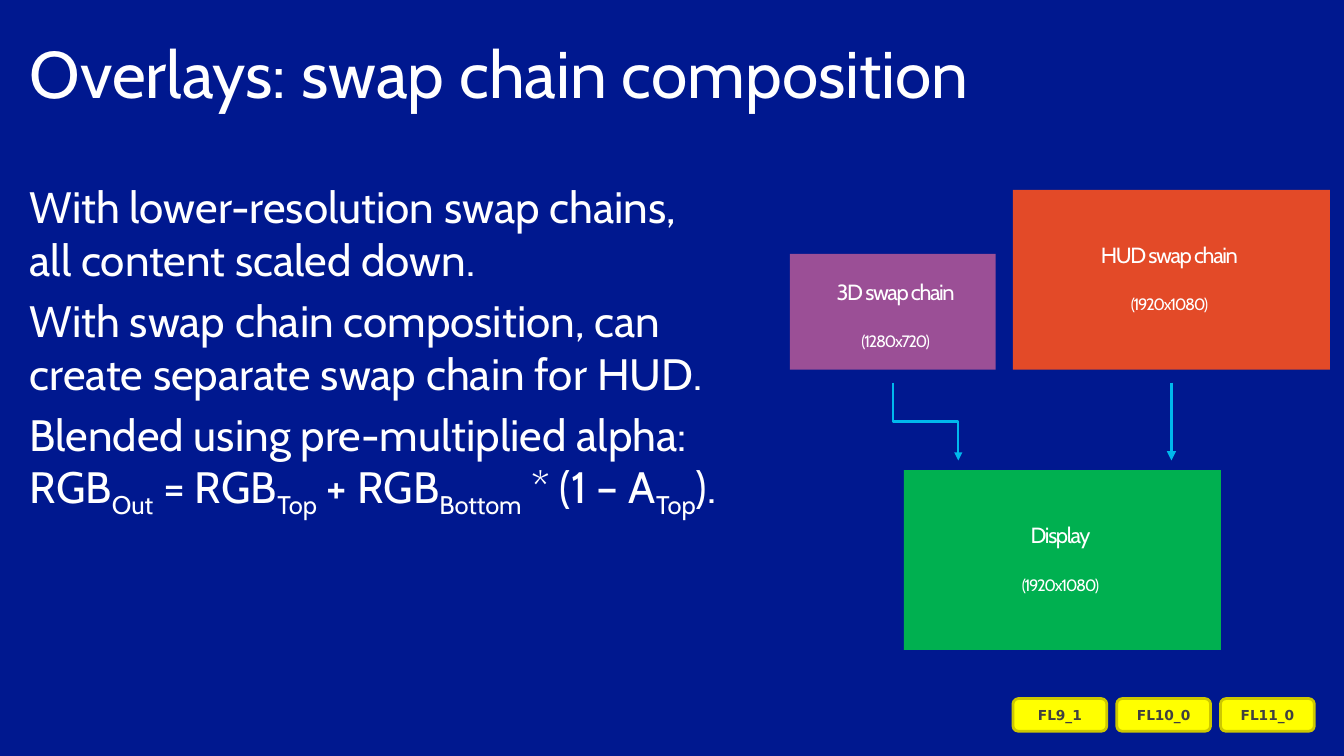
from pptx import Presentation
from pptx.dml.color import RGBColor
from pptx.enum.shapes import MSO_CONNECTOR, MSO_SHAPE
from pptx.enum.text import MSO_ANCHOR, PP_ALIGN
from pptx.oxml.ns import qn
from pptx.util import Pt
from lxml.etree import SubElement

WHITE = "FFFFFF"
CYAN = "00B8ED"
BODY = [
    ["With lower-resolution swap chains,", "all content scaled down."],
    ["With swap chain composition, can", "create separate swap chain for HUD."],
    ["Blended using pre-multiplied alpha:",
     "RGB_Out_ = RGB_Top_ + RGB_Bottom_ * (1 – A_Top_)."],
]
FEATURE_LEVELS = ["FL9_1", "FL10_0", "FL11_0"]


def color(value):
    return RGBColor.from_string(value)


def style(span, size, fill=WHITE, font="Cabin", bold=False):
    span.font.size = Pt(size)
    span.font.name = font
    span.font.bold = bold
    span.font.color.rgb = color(fill)


def set_margins(frame, left, top, right, bottom):
    frame.margin_left, frame.margin_top = Pt(left), Pt(top)
    frame.margin_right, frame.margin_bottom = Pt(right), Pt(bottom)


def add_text_box(page, left, top, width, height):
    frame = page.shapes.add_textbox(Pt(left), Pt(top), Pt(width), Pt(height)).text_frame
    frame.word_wrap = True
    set_margins(frame, 0, 0, 0, 0)
    return frame


def add_title(page, text):
    frame = add_text_box(page, 21.6, 23.8, 936, 72)
    frame.text = text
    style(frame.paragraphs[0].runs[0], 48)


def add_line_with_subscripts(para, line):
    for index, piece in enumerate(line.split("_")):
        span = para.add_run()
        span.text = piece
        style(span, 32)
        if index % 2:
            span.font._element.set("baseline", "-25000")


def add_body(page):
    frame = add_text_box(page, 21.6, 131, 936, 396)
    for index, (first, second) in enumerate(BODY):
        para = frame.add_paragraph() if index else frame.paragraphs[0]
        para.space_before = Pt(6 if index else 0)
        add_line_with_subscripts(para, first)
        para.add_line_break()
        add_line_with_subscripts(para, second)


def add_box(page, kind, left, top, width, height, fill):
    box = page.shapes.add_shape(kind, Pt(left), Pt(top), Pt(width), Pt(height))
    box.shadow.inherit = False
    box.fill.solid()
    box.fill.fore_color.rgb = color(fill)
    box.line.fill.background()
    box.text_frame.word_wrap = True
    box.text_frame.vertical_anchor = MSO_ANCHOR.MIDDLE
    return box


def add_surface(page, name, resolution, left, top, width, height, fill, inset=0):
    box = add_box(page, MSO_SHAPE.RECTANGLE, left, top, width, height, fill)
    frame = box.text_frame
    set_margins(frame, inset, inset, 2.9, 2.9)
    frame.text = f"{name}\n({resolution})"
    for para, size in zip(frame.paragraphs, (16, 12)):
        para.alignment = PP_ALIGN.CENTER
        style(para.runs[0], size)
        para.runs[0].font._element.set("spc", "-100")
    frame.paragraphs[1].space_before = Pt(19.4)


def add_feature_level(page, text, left):
    box = add_box(page, MSO_SHAPE.ROUNDED_RECTANGLE, left, 509, 68.4, 23.8, "FFFF00")
    box.line.color.rgb = color("CDC800")
    box.line.width = Pt(2)
    box.text_frame.text = text
    para = box.text_frame.paragraphs[0]
    para.alignment = PP_ALIGN.CENTER
    style(para.runs[0], 10, "404040", "DejaVu Sans", True)


def add_arrow(page, kind, start, end, weight):
    arrow = page.shapes.add_connector(kind, *map(Pt, start + end))
    arrow.line.color.rgb = color(CYAN)
    arrow.line.width = Pt(weight)
    SubElement(arrow.line._get_or_add_ln(), qn("a:tailEnd"), type="triangle")
    SubElement(arrow._element.spPr, qn("a:effectLst"))
    return arrow


def add_stepped_arrow(page, start, end, weight):
    middle_x, middle_y = (start[0] + end[0]) / 2, (start[1] + end[1]) / 2
    half_run, half_drop = (end[0] - start[0]) / 2, (end[1] - start[1]) / 2
    arrow = add_arrow(page, MSO_CONNECTOR.ELBOW,
                      (middle_x + half_drop, middle_y - half_run),
                      (middle_x - half_drop, middle_y + half_run), weight)
    arrow._element.spPr.find(qn("a:xfrm")).set("rot", "16200000")


def main():
    deck = Presentation()
    deck.slide_width, deck.slide_height = Pt(979.2), Pt(550.8)
    page = deck.slides.add_slide(deck.slide_layouts[6])
    page.background.fill.solid()
    page.background.fill.fore_color.rgb = color("00188F")

    add_title(page, "Overlays: swap chain composition")
    add_body(page)
    for index, level in enumerate(FEATURE_LEVELS):
        add_feature_level(page, level, 738 + index * 75.6)

    add_surface(page, "HUD swap chain", "1920x1080", 738, 138.3, 231, 131, "E34A28")
    add_surface(page, "Display", "1920x1080", 658.6, 342.6, 231, 131, "00B050")
    add_surface(page, "3D swap chain", "1280x720", 575.5, 185, 150, 84.3, "9B4F96", 7.2)
    add_arrow(page, MSO_CONNECTOR.STRAIGHT, (853.5, 278.8), (853.5, 335.5), 2.25)
    add_stepped_arrow(page, (650.6, 278.8), (698.2, 335.5), 1.5)
    deck.save("out.pptx")


if __name__ == "__main__":
    main()
